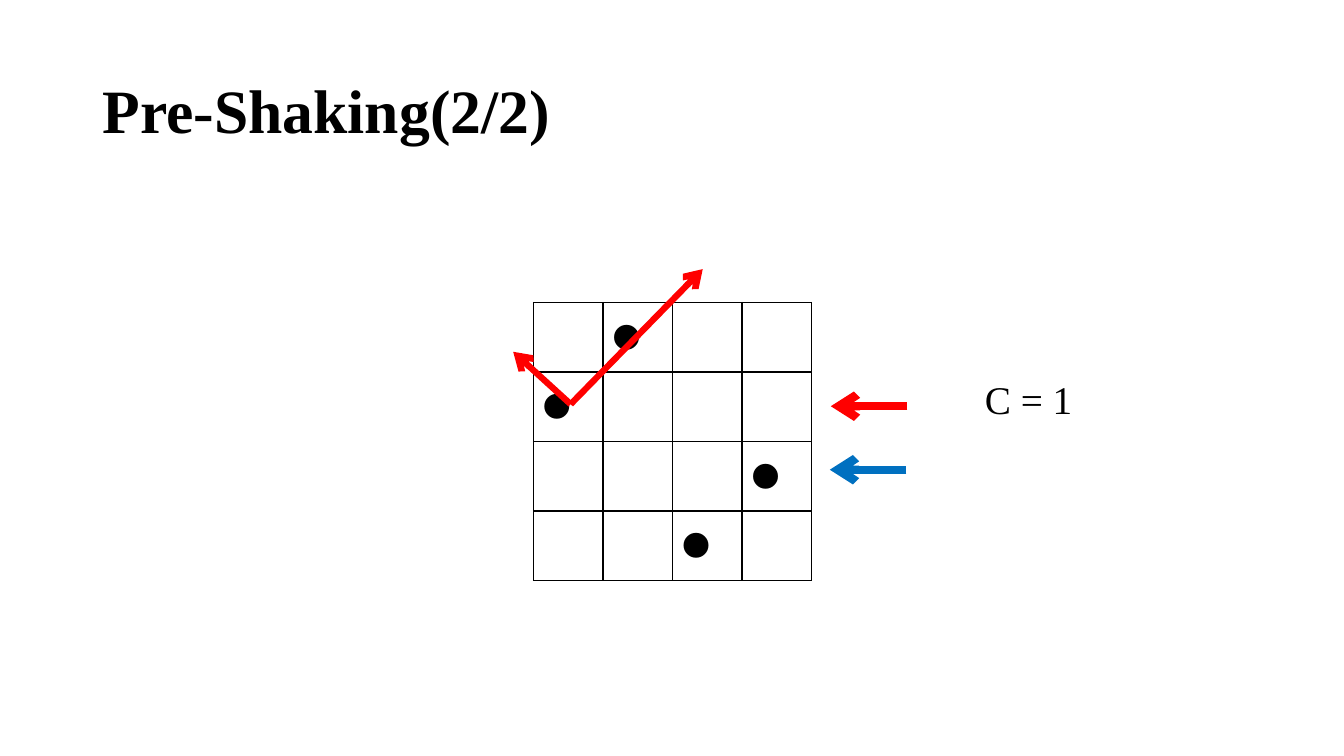
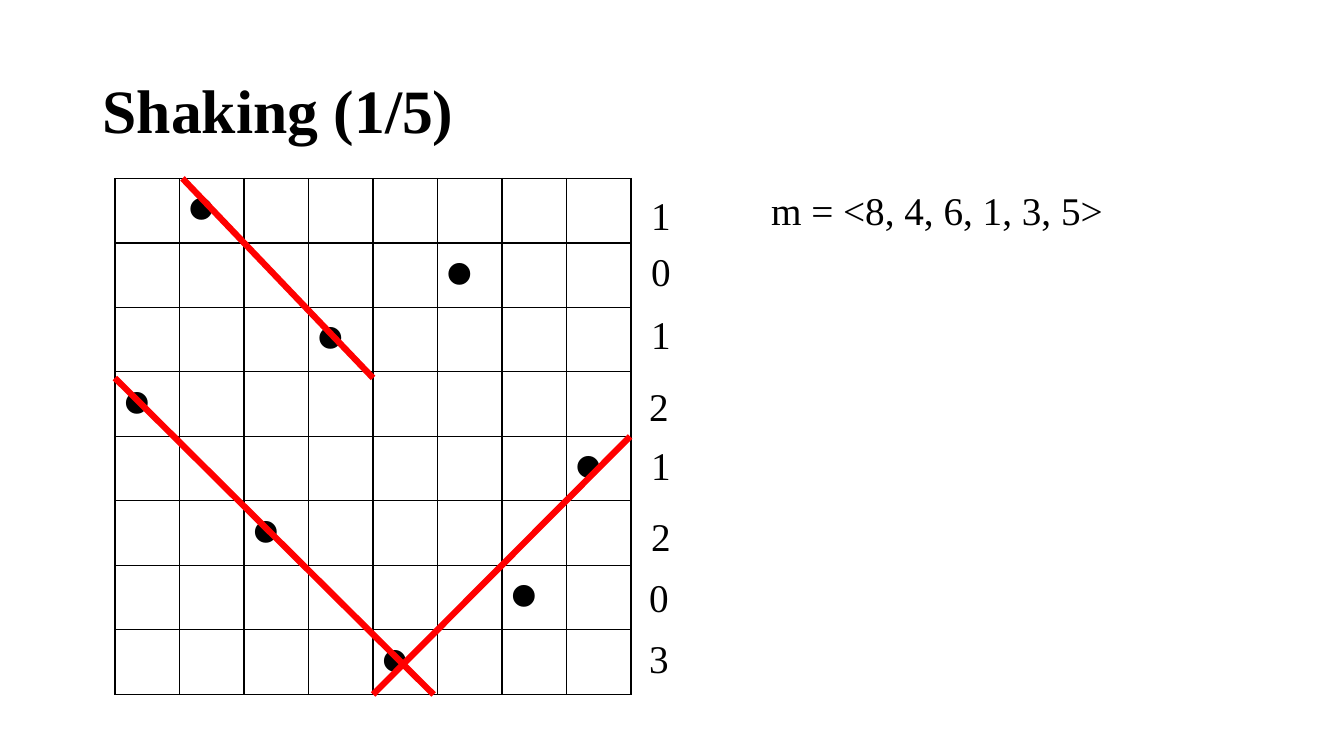
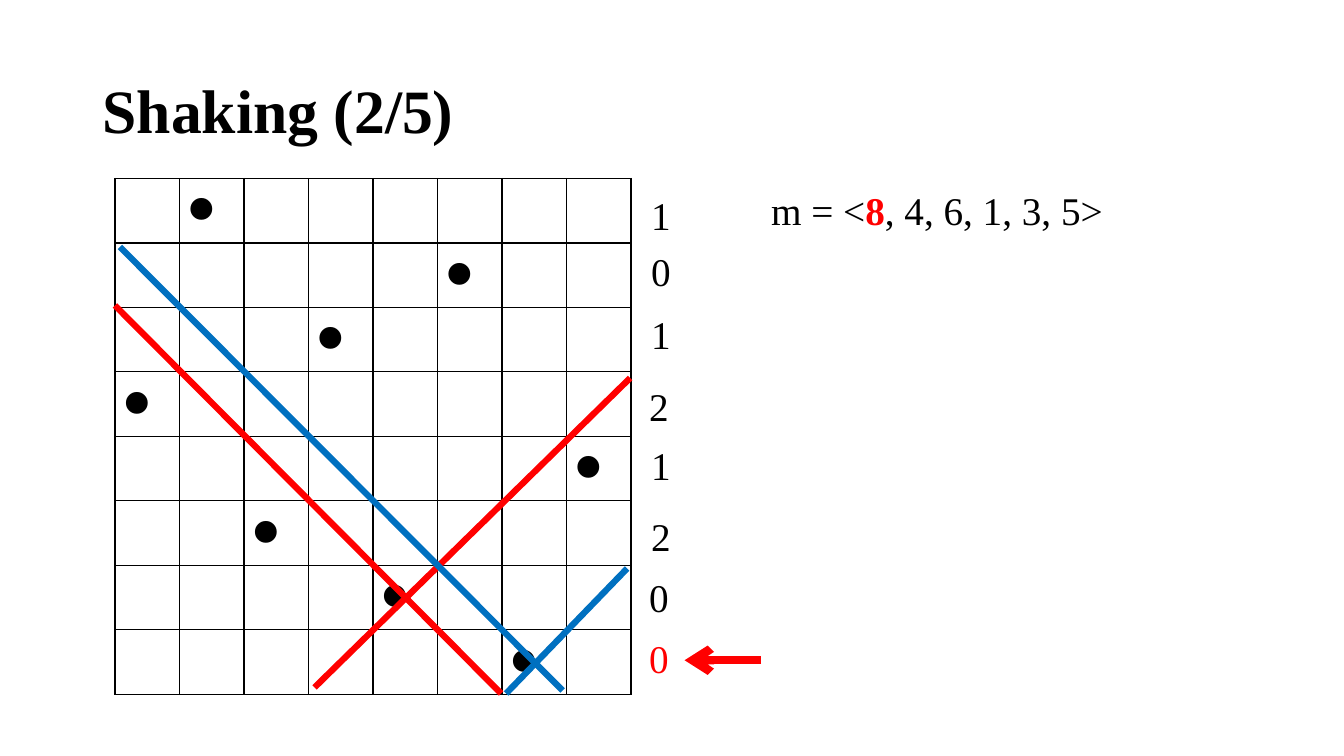
import pptx
import pptx.util
import pptx.dml.color
import pptx.enum.shapes
import pptx.enum.text
import pptx.oxml
import pptx.oxml.ns
from lxml import etree

Inches = pptx.util.Inches
Pt = pptx.util.Pt

COLORS = {"ink": "000000", "red": "FF0000", "blue": "0070C0"}
SERIF = "Times New Roman"
DOT_FONT = "Calibri"
DOT = "⚫"
LINE, ARROW = 4.5, 6

TITLE_BOX = (0.92, 0.4, 11.5, 1.45)
SMALL_BOARD = {"at": (5.29, 3), "side": 2.76, "dot_size": 32}
LARGE_BOARD = {"at": (1.14, 1.77), "side": 5.12, "dot_size": 28}
COUNT_SPOTS = [(6.36, 1.85), (6.36, 2.4), (6.36, 3.03), (6.34, 3.74),
               (6.36, 4.33), (6.36, 5.03), (6.34, 5.64), (6.34, 6.24)]
MOVES_BOX = (7.55, 1.8, 3.57, 0.57)

SLIDES = [
    {
        "title": "Pre-Shaking(2/2)",
        "board": SMALL_BOARD,
        "queens": [1, 0, 3, 2],
        "lines": [
            ((5.66, 4.01), (6.97, 2.67), "red", LINE, True),
            ((5.66, 4.01), (5.09, 3.49), "red", LINE, True),
            ((9, 4.03), (8.24, 4.03), "red", ARROW, True),
            ((8.99, 4.66), (8.23, 4.66), "blue", ARROW, True),
        ],
        "collisions": "C = 1",
    },
    {
        "title": "Shaking (1/5)",
        "board": LARGE_BOARD,
        "queens": [1, 5, 3, 0, 7, 2, 6, 4],
        "lines": [
            ((1.14, 3.75), (4.3, 6.89), "red", LINE, False),
            ((6.25, 4.33), (3.7, 6.89), "red", LINE, False),
            ((1.81, 1.77), (3.7, 3.75), "red", LINE, False),
        ],
        "counts": "10121203",
        "moves": [("m = <8, 4, 6, 1, 3, 5>", "ink", False)],
    },
    {
        "title": "Shaking (2/5)",
        "board": LARGE_BOARD,
        "queens": [1, 5, 3, 0, 7, 2, 4, 6],
        "lines": [
            ((1.14, 3.03), (4.97, 6.88), "red", LINE, False),
            ((6.25, 3.75), (3.12, 6.82), "red", LINE, False),
            ((1.19, 2.45), (5.58, 6.85), "blue", LINE, False),
            ((7.55, 6.55), (6.79, 6.55), "red", ARROW, True),
            ((6.22, 5.64), (5.02, 6.88), "blue", LINE, False),
        ],
        "counts": "10121200",
        "changed_row": 7,
        "moves": [("m = <", "ink", False), ("8", "red", True),
                  (", 4, 6, 1, 3, 5>", "ink", False)],
    },
]


def rgb(name):
    return pptx.dml.color.RGBColor.from_string(COLORS[name])


def add_run(paragraph, words, size, color="ink", bold=False, font=SERIF):
    run = paragraph.add_run()
    run.text = words
    run.font.size = Pt(size)
    run.font.name = font
    run.font.bold = bold
    run.font.color.rgb = rgb(color)


def add_text(slide, box, runs, size=28, wrap=False):
    frame = slide.shapes.add_textbox(*map(Inches, box)).text_frame
    frame.word_wrap = wrap
    if not wrap:
        frame.auto_size = pptx.enum.text.MSO_AUTO_SIZE.SHAPE_TO_FIT_TEXT
    for words, color, bold in runs:
        add_run(frame.paragraphs[0], words, size, color, bold)
    return frame


def add_title(slide, title):
    frame = add_text(slide, TITLE_BOX, [(title, "ink", True)], 44, True)
    frame.vertical_anchor = pptx.enum.text.MSO_ANCHOR.MIDDLE
    frame.paragraphs[0].line_spacing = 0.9


def outline(cell):
    properties = cell._tc.get_or_add_tcPr()
    for side in ("lnL", "lnR", "lnT", "lnB"):
        border = etree.SubElement(properties, pptx.oxml.ns.qn("a:" + side), w=str(Pt(1)))
        fill = etree.SubElement(border, pptx.oxml.ns.qn("a:solidFill"))
        etree.SubElement(fill, pptx.oxml.ns.qn("a:srgbClr"), val=COLORS["ink"])
    cell.fill.background()


def add_board(slide, board, queens):
    n = len(queens)
    left, top = map(Inches, board["at"])
    side = Inches(board["side"])
    table = slide.shapes.add_table(n, n, left, top, side, side).table
    table.first_row = False
    table.horz_banding = False
    for band in (*table.columns,):
        band.width = side // n
    for band in table.rows:
        band.height = side // n
    for cell in table.iter_cells():
        outline(cell)
    for row, column in enumerate(queens):
        square = table.cell(row, column).text_frame.paragraphs[0]
        add_run(square, DOT, board["dot_size"], font=DOT_FONT)


def add_line(slide, start, end, color, width, arrow):
    line = slide.shapes.add_connector(
        pptx.enum.shapes.MSO_CONNECTOR.STRAIGHT, *map(Inches, start + end))
    line.line.color.rgb = rgb(color)
    line.line.width = Pt(width)
    if arrow:
        etree.SubElement(line.line._get_or_add_ln(),
                         pptx.oxml.ns.qn("a:tailEnd"), type="arrow")
    etree.SubElement(line._element.spPr, pptx.oxml.ns.qn("a:effectLst"))


def add_counts(slide, counts, changed_row):
    for row, (spot, count) in enumerate(zip(COUNT_SPOTS, counts)):
        color = "red" if row == changed_row else "ink"
        add_text(slide, spot + (0.4, 0.57), [(count, color, False)])


def build_slide(deck, content):
    slide = deck.slides.add_slide(deck.slide_layouts[6])
    add_title(slide, content["title"])
    add_board(slide, content["board"], content["queens"])
    for line in content["lines"]:
        add_line(slide, *line)
    if "counts" in content:
        add_counts(slide, content["counts"], content.get("changed_row"))
        add_text(slide, MOVES_BOX, content["moves"])
    if "collisions" in content:
        frame = add_text(slide, (9.67, 3.73, 1.46, 0.63),
                         [(content["collisions"], "ink", False)], wrap=True)
        frame.paragraphs[0].line_spacing = 0.9
        frame.paragraphs[0].space_before = Pt(10)


def main():
    deck = pptx.Presentation()
    deck.slide_width = Inches(13.33)
    deck.slide_height = Inches(7.5)
    for content in SLIDES:
        build_slide(deck, content)
    deck.save("out.pptx")


if __name__ == "__main__":
    main()
